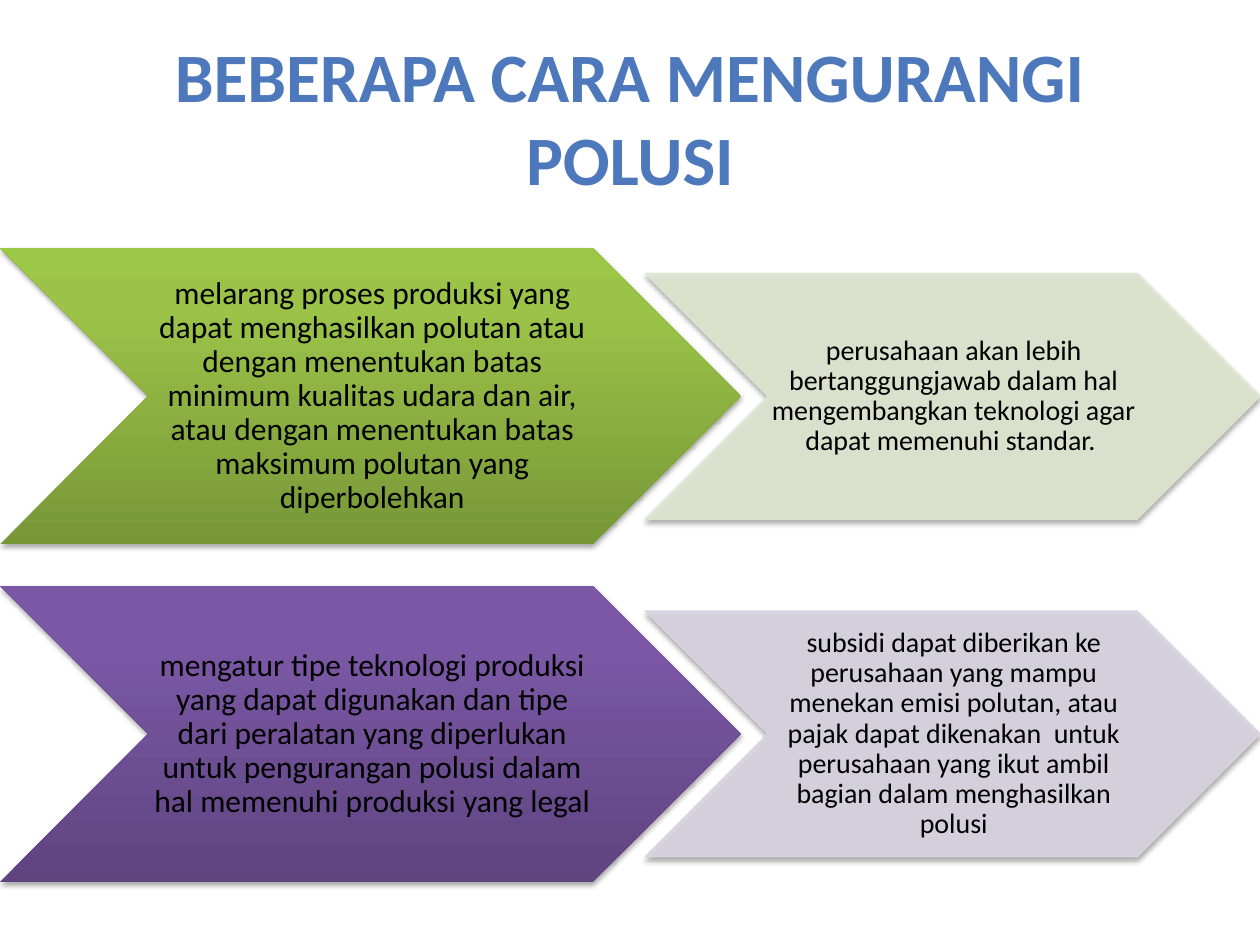
"""Build a slide on ways to reduce pollution, with two rows of paired chevrons."""
from lxml import etree
from pptx import Presentation
from pptx.dml.color import RGBColor
from pptx.enum.shapes import MSO_SHAPE
from pptx.enum.text import MSO_ANCHOR, PP_ALIGN
from pptx.oxml import parse_xml
from pptx.oxml.ns import nsdecls, qn
from pptx.util import Inches, Pt

CHEVRON = MSO_SHAPE.CHEVRON
MIDDLE = MSO_ANCHOR.MIDDLE
CENTER = PP_ALIGN.CENTER

COLORS = {"title": "4D79BC", "text": "000000", "shadow": "000000"}
TITLE = "BEBERAPA CARA MENGURANGI POLUSI"
ROWS = [
    {
        "action": "melarang proses produksi yang dapat menghasilkan polutan atau "
                  "dengan menentukan batas minimum kualitas udara dan air, atau dengan "
                  "menentukan batas maksimum polutan yang diperbolehkan",
        "effect": "perusahaan akan lebih bertanggungjawab dalam hal mengembangkan "
                  "teknologi agar dapat memenuhi standar. ",
        "gradient": [(0, "779737"), (80, "9BC348"), (100, "9DC746")],
        "tint": "DEE7D1",
    },
    {
        "action": "mengatur tipe teknologi produksi yang dapat digunakan dan tipe dari "
                  "peralatan yang diperlukan untuk pengurangan polusi dalam hal memenuhi "
                  "produksi yang legal",
        "effect": "subsidi dapat diberikan ke perusahaan yang mampu menekan emisi "
                  "polutan, atau pajak dapat dikenakan  untuk perusahaan yang ikut ambil "
                  "bagian dalam menghasilkan polusi",
        "gradient": [(0, "5F4480"), (80, "7B58A6"), (100, "7C57A8")],
        "tint": "D8D3E0",
    },
]
ROW_TOP, ROW_PITCH = 1.97, 2.68
ACTION = {"left": 0, "width": 5.88, "height": 2.35, "size": 18, "inset": 0.03}
EFFECT = {"left": 5.12, "width": 4.88, "height": 1.95, "size": 16, "inset": 0.02}


def add_text(slide, text, box, insets, size, color, bold=False, spacing=1.0):
    frame = slide.shapes.add_textbox(*map(Inches, box)).text_frame
    left, top, right, bottom = map(Inches, insets)
    frame_format = {"word_wrap": True, "vertical_anchor": MIDDLE, "margin_left": left,
                    "margin_top": top, "margin_right": right, "margin_bottom": bottom}
    paragraph = frame.paragraphs[0]
    paragraph.text = text
    font = paragraph.runs[0].font
    formats = [
        (frame, frame_format),
        (paragraph, {"alignment": CENTER, "line_spacing": spacing}),
        (font, {"name": "Calibri", "size": Pt(size), "bold": bold}),
    ]
    for target, values in formats:
        for key, value in values.items():
            setattr(target, key, value)
    font.color.rgb = RGBColor.from_string(color)


def add_chevron(slide, text, part, middle):
    left, width, height = part["left"], part["width"], part["height"]
    top = middle - height / 2
    chevron = slide.shapes.add_shape(CHEVRON, *map(Inches, (left, top, width, height)))
    chevron.shadow.inherit = False
    effects = chevron._element.spPr.find(qn("a:effectLst"))
    effects.append(parse_xml(
        f'<a:outerShdw {nsdecls("a")} blurRad="40000" dist="23000" dir="5400000" '
        f'rotWithShape="0"><a:srgbClr val="{COLORS["shadow"]}">'
        '<a:alpha val="35000"/></a:srgbClr></a:outerShdw>'))
    add_text(slide, text, (left + height / 2, top, width - height, height),
             (part["inset"], 0.01, 0, 0.01), part["size"], COLORS["text"], spacing=0.9)
    return chevron


def fill_gradient(chevron, stops):
    chevron.line.fill.background()
    chevron.fill.gradient()
    chevron.fill.gradient_angle = 90
    stop_list = chevron._element.spPr.find(f'{qn("a:gradFill")}/{qn("a:gsLst")}')
    for old_stop in list(stop_list):
        stop_list.remove(old_stop)
    for position, color in stops:
        stop = etree.SubElement(stop_list, qn("a:gs"), pos=str(position * 1000))
        etree.SubElement(stop, qn("a:srgbClr"), val=color)


def fill_tint(chevron, color):
    chevron.fill.solid()
    chevron.line.width = Pt(0.75)
    for target in (chevron.fill.fore_color, chevron.line.color):
        target.rgb = RGBColor.from_string(color)
    properties = chevron._element.spPr
    for fill in (properties, properties.find(qn("a:ln"))):
        solid = fill.find(f'{qn("a:solidFill")}/{qn("a:srgbClr")}')
        etree.SubElement(solid, qn("a:alpha"), val="90000")


def main():
    deck = Presentation()
    deck.slide_width, deck.slide_height = Inches(10), Inches(7.5)
    slide = deck.slides.add_slide(deck.slide_layouts[6])
    add_text(slide, TITLE, (0.5, 0.3, 9, 1.25), (0.1, 0.05, 0.1, 0.05), 39.6,
             COLORS["title"], bold=True)
    for index, row in enumerate(ROWS):
        middle = ROW_TOP + index * ROW_PITCH + ACTION["height"] / 2
        fill_gradient(add_chevron(slide, row["action"], ACTION, middle), row["gradient"])
        fill_tint(add_chevron(slide, row["effect"], EFFECT, middle), row["tint"])
    deck.save("out.pptx")


if __name__ == "__main__":
    main()
